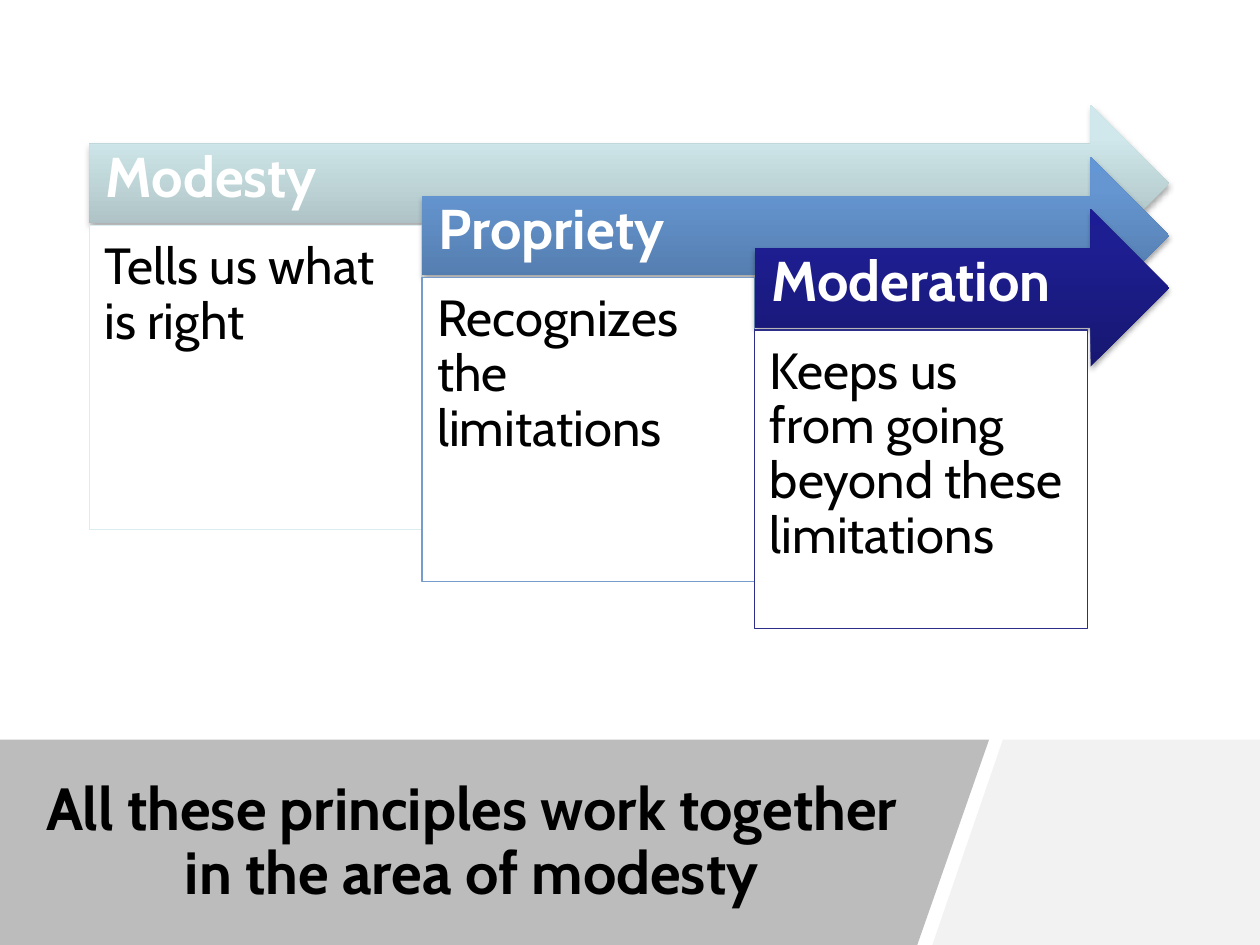
from dataclasses import dataclass

from lxml.etree import SubElement
from pptx import Presentation
from pptx.dml.color import RGBColor
from pptx.enum.shapes import MSO_SHAPE
from pptx.enum.text import MSO_ANCHOR, PP_ALIGN
from pptx.oxml import parse_xml
from pptx.oxml.ns import nsdecls, qn
from pptx.shapes.autoshape import Shape
from pptx.slide import Slide
from pptx.util import Inches, Pt


@dataclass(frozen=True)
class Theme:
    font: str = "Cabin"
    black: str = "000000"
    white: str = "FFFFFF"
    title_band: str = "595959"
    corner_band: str = "F2F2F2"
    title_size: float = 34
    label_size: float = 32
    body_size: float = 29


@dataclass(frozen=True)
class Principle:
    label: str
    description: str
    gradient: tuple[str, str, str]
    outline: str
    box_height: float = 2.41


THEME = Theme()
PRINCIPLES = [
    Principle("Modesty", "Tells us what is right",
              ("A0B3B5", "D0E8EB", "D1EAEC"), "DAEDEF"),
    Principle("Propriety", "Recognizes the limitations",
              ("4E73A1", "6596D1", "6396D4"), "759CCB"),
    Principle("Moderation", "Keeps us from going beyond these limitations",
              ("171771", "1E1E93", "1C1C96"), "2D2D8A", 2.37),
]
GRADIENT_POSITIONS = (0, 80, 100)

SLIDE_WIDTH, SLIDE_HEIGHT = 10, 7.5
BAND_TOP = 5.87
FIRST_LEFT, FIRST_TOP = 0.71, 0.83
ARROW_RIGHT, ARROW_HEIGHT = 9.28, 1.25
BOX_WIDTH, BOX_DROP = 2.64, 0.96
STEP_DOWN = 0.83 / 2
LABEL_HEIGHT = ARROW_HEIGHT / 2
HEAD_INSET = ARROW_HEIGHT / 4


def write_text(shape: Shape, text: str, *, size: float, color: str,
               bold: bool = False, align: PP_ALIGN = PP_ALIGN.LEFT,
               anchor: MSO_ANCHOR = MSO_ANCHOR.MIDDLE,
               insets: tuple[float, float, float, float] = (0.1, 0.05, 0.1, 0.05)) -> None:
    """Insets run left, top, right, bottom."""
    frame = shape.text_frame
    frame.word_wrap = True
    frame.vertical_anchor = anchor
    (frame.margin_left, frame.margin_top,
     frame.margin_right, frame.margin_bottom) = map(Inches, insets)
    paragraph = frame.paragraphs[0]
    paragraph.alignment = align
    paragraph.line_spacing = 0.9
    run = paragraph.add_run()
    run.text = text
    run.font.name = THEME.font
    run.font.size = Pt(size)
    run.font.bold = bold
    run.font.color.rgb = RGBColor.from_string(color)


def add_text_box(slide: Slide, left: float, top: float, width: float, height: float) -> Shape:
    return slide.shapes.add_textbox(Inches(left), Inches(top), Inches(width), Inches(height))


def add_band(slide: Slide, points: list[tuple[float, float]], color: str,
             opacity: int = 100) -> None:
    builder = slide.shapes.build_freeform(*map(Inches, points[0]), scale=1.0)
    builder.add_line_segments([(Inches(x), Inches(y)) for x, y in points[1:]], close=True)
    band = builder.convert_to_shape()
    band.shadow.inherit = False
    band.line.fill.background()
    band.fill.solid()
    band.fill.fore_color.rgb = RGBColor.from_string(color)
    if opacity < 100:
        color_element = band._element.spPr.find(f"{qn('a:solidFill')}/{qn('a:srgbClr')}")
        SubElement(color_element, qn("a:alpha"), val=str(opacity * 1000))


def add_arrow(slide: Slide, left: float, top: float, gradient: tuple[str, str, str]) -> None:
    """Arrow with an upward gradient and a soft shadow below."""
    arrow = slide.shapes.add_shape(MSO_SHAPE.RIGHT_ARROW, Inches(left), Inches(top),
                                   Inches(ARROW_RIGHT - left), Inches(ARROW_HEIGHT))
    arrow.line.fill.background()
    arrow.shadow.inherit = False
    stops = "".join(f'<a:gs pos="{position * 1000}"><a:srgbClr val="{color}"/></a:gs>'
                    for position, color in zip(GRADIENT_POSITIONS, gradient))
    properties = arrow._element.spPr
    properties.find(qn("a:prstGeom")).addnext(parse_xml(
        f'<a:gradFill {nsdecls("a")} rotWithShape="1"><a:gsLst>{stops}</a:gsLst>'
        '<a:lin ang="16200000" scaled="0"/></a:gradFill>'))
    properties.find(qn("a:effectLst")).append(parse_xml(
        f'<a:outerShdw {nsdecls("a")} blurRad="{Pt(3.1)}" dist="{Pt(1.8)}" dir="5400000" '
        f'rotWithShape="0"><a:srgbClr val="{THEME.black}"><a:alpha val="35000"/>'
        '</a:srgbClr></a:outerShdw>'))


def add_principle(slide: Slide, principle: Principle, index: int) -> None:
    left = FIRST_LEFT + index * BOX_WIDTH
    top = FIRST_TOP + index * STEP_DOWN
    add_arrow(slide, left, top, principle.gradient)

    label = add_text_box(slide, left, top + HEAD_INSET,
                         ARROW_RIGHT - HEAD_INSET - left, LABEL_HEIGHT)
    write_text(label, principle.label, size=THEME.label_size, color=THEME.white,
               bold=True, insets=(0.13, 0.13, 0.28, 0.2))

    box = slide.shapes.add_shape(MSO_SHAPE.RECTANGLE, Inches(left), Inches(top + BOX_DROP),
                                 Inches(BOX_WIDTH), Inches(principle.box_height))
    box.shadow.inherit = False
    box.fill.solid()
    box.fill.fore_color.rgb = RGBColor.from_string(THEME.white)
    box.line.color.rgb = RGBColor.from_string(principle.outline)
    box.line.width = Pt(0.75)
    write_text(box, principle.description, size=THEME.body_size, color=THEME.black,
               anchor=MSO_ANCHOR.TOP, insets=(0.12, 0.12, 0.12, 0.12))


def main() -> None:
    presentation = Presentation()
    presentation.slide_width = Inches(SLIDE_WIDTH)
    presentation.slide_height = Inches(SLIDE_HEIGHT)
    slide = presentation.slides.add_slide(presentation.slide_layouts[6])

    add_band(slide, [(7.96, BAND_TOP), (SLIDE_WIDTH, BAND_TOP),
                     (SLIDE_WIDTH, SLIDE_HEIGHT), (7.4, SLIDE_HEIGHT)], THEME.corner_band)
    add_band(slide, [(0, BAND_TOP), (7.85, BAND_TOP),
                     (7.28, SLIDE_HEIGHT), (0, SLIDE_HEIGHT)], THEME.title_band, opacity=40)
    title = add_text_box(slide, 0.09, 6.09, 7.31, 1.2)
    write_text(title, "All these principles work together in the area of modesty",
               size=THEME.title_size, color=THEME.black, bold=True, align=PP_ALIGN.CENTER)

    for index, principle in enumerate(PRINCIPLES):
        add_principle(slide, principle, index)
    presentation.save("out.pptx")


if __name__ == "__main__":
    main()
